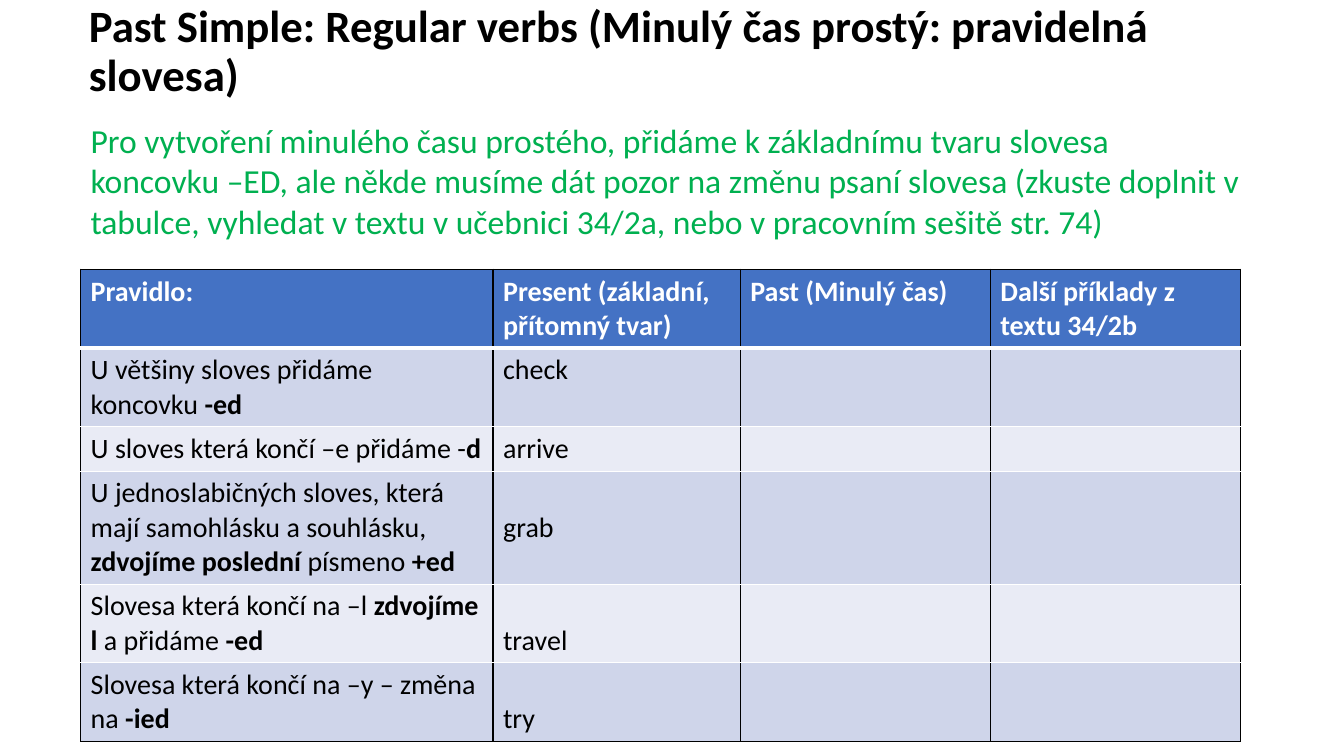
from dataclasses import dataclass

from lxml.etree import SubElement
from pptx import Presentation
from pptx.dml.color import RGBColor
from pptx.enum.text import MSO_ANCHOR as Anchor, MSO_AUTO_SIZE as AutoSize, PP_ALIGN as Align
from pptx.oxml.ns import qn
from pptx.slide import Slide
from pptx.table import _Cell as Cell
from pptx.text.text import _Paragraph as Paragraph
from pptx.util import Pt


@dataclass(frozen=True)
class Theme:
    font: str = "Calibri"
    title_size: int = 32
    intro_size: int = 24
    table_size: int = 20
    black: str = "000000"
    white: str = "FFFFFF"
    green: str = "00B050"
    header: str = "4472C4"
    bands: tuple[str, str] = ("CFD5EA", "E9EBF5")


@dataclass(frozen=True)
class Span:
    text: str
    bold: bool = False


@dataclass(frozen=True)
class Rule:
    spans: tuple[Span, ...]
    verb: str
    lines: int
    verb_on_line: int = 1


THEME = Theme()
TITLE = "Past Simple: Regular verbs (Minulý čas prostý: pravidelná slovesa)"
INTRO = (
    "Pro vytvoření minulého času prostého, přidáme k základnímu tvaru slovesa ",
    "koncovku –ED, ale někde musíme dát pozor na změnu psaní slovesa (zkuste doplnit v "
    "tabulce, vyhledat v textu v učebnici 34/2a, nebo v pracovním sešitě str. 74)",
)
HEADINGS = (
    "Pravidlo:",
    "Present (základní, přítomný tvar)",
    "Past (Minulý čas)",
    "Další příklady z textu 34/2b",
)
RULES = (
    Rule((Span("U většiny sloves přidáme koncovku "), Span("-ed", True)), "check", 2),
    Rule((Span("U sloves která končí –e přidáme -"), Span("d", True)), "arrive", 1),
    Rule(
        (
            Span("U jednoslabičných sloves, která mají samohlásku a souhlásku, "),
            Span("zdvojíme poslední ", True),
            Span("písmeno "),
            Span("+ed", True),
        ),
        "grab", 3, 2,
    ),
    Rule(
        (
            Span("Slovesa která končí na –l "),
            Span("zdvojíme l ", True),
            Span("a přidáme "),
            Span("-ed", True),
        ),
        "travel", 2, 2,
    ),
    Rule((Span("Slovesa která končí na –y – změna na "), Span("-ied", True)), "try", 2, 2),
)
COLUMN_WIDTHS = (294.6, 176.6, 178.6, 178.6)
LINE_HEIGHT = 24.4
CELL_MARGIN = 3.6


def add_span(para: Paragraph, span: Span, size: int, color: str) -> None:
    run = para.add_run()
    run.text = span.text
    run.font.name = THEME.font
    run.font.size = Pt(size)
    run.font.bold = span.bold
    run.font.color.rgb = RGBColor.from_string(color)


def set_borders(cell: Cell, top: str, bottom: str, bottom_width: int) -> None:
    """Black sides, with the given top and bottom lines."""
    properties = cell._tc.get_or_add_tcPr()
    edges = (
        ("a:lnL", THEME.black, 1),
        ("a:lnR", THEME.black, 1),
        ("a:lnT", top, 1),
        ("a:lnB", bottom, bottom_width),
    )
    for position, (tag, color, width) in enumerate(edges):
        line = SubElement(properties, qn(tag), w=str(Pt(width)))
        SubElement(SubElement(line, qn("a:solidFill")), qn("a:srgbClr"), val=color)
        properties.insert(position, line)


def fill_cell(cell: Cell, spans: tuple[Span, ...], fill: str, color: str) -> None:
    cell.fill.solid()
    cell.fill.fore_color.rgb = RGBColor.from_string(fill)
    for span in spans:
        add_span(cell.text_frame.paragraphs[0], span, THEME.table_size, color)


def row_height(lines: int) -> Pt:
    return Pt(lines * LINE_HEIGHT + 2 * CELL_MARGIN)


def add_title(page: Slide) -> None:
    title = page.shapes.title
    title.left, title.top, title.width, title.height = Pt(56.2), Pt(9.4), Pt(861.8), Pt(56.2)
    frame = title.text_frame
    frame.word_wrap = True
    frame.auto_size = AutoSize.NONE
    frame.vertical_anchor = Anchor.MIDDLE
    para = frame.paragraphs[0]
    para.alignment = Align.LEFT
    para.line_spacing = 0.9
    add_span(para, Span(TITLE, True), THEME.title_size, THEME.black)


def add_intro(page: Slide) -> None:
    box = page.shapes.add_textbox(Pt(57.6), Pt(82.1), Pt(845.3), Pt(94.3))
    box.text_frame.word_wrap = True
    para = box.text_frame.paragraphs[0]
    for index, line in enumerate(INTRO):
        if index:
            para.add_line_break()
        add_span(para, Span(line), THEME.intro_size, THEME.green)


def add_rule_table(page: Slide) -> None:
    heights = [row_height(lines) for lines in (2, *(rule.lines for rule in RULES))]
    table = page.shapes.add_table(
        len(heights), len(HEADINGS), Pt(57.6), Pt(192.4), Pt(sum(COLUMN_WIDTHS)), sum(heights)
    ).table
    for column, width in zip(table.columns, COLUMN_WIDTHS):
        column.width = Pt(width)
    for row, height in zip(table.rows, heights):
        row.height = height

    for cell, heading in zip(table.rows[0].cells, HEADINGS):
        fill_cell(cell, (Span(heading, True),), THEME.header, THEME.white)
        set_borders(cell, THEME.black, THEME.white, 3)

    for number, rule in enumerate(RULES, start=1):
        bottom = THEME.black if number == len(RULES) else THEME.white
        contents = (rule.spans, (Span(rule.verb),), (), ())
        for cell, spans in zip(table.rows[number].cells, contents):
            fill_cell(cell, spans, THEME.bands[(number - 1) % 2], THEME.black)
            set_borders(cell, THEME.white, bottom, 1)
        table.cell(number, 1).margin_top = Pt(CELL_MARGIN + (rule.verb_on_line - 1) * LINE_HEIGHT)


def main() -> None:
    deck = Presentation()
    deck.slide_width, deck.slide_height = Pt(960), Pt(540)
    page = deck.slides.add_slide(deck.slide_layouts.get_by_name("Title Only"))
    add_title(page)
    add_rule_table(page)
    add_intro(page)
    deck.save("out.pptx")


if __name__ == "__main__":
    main()
